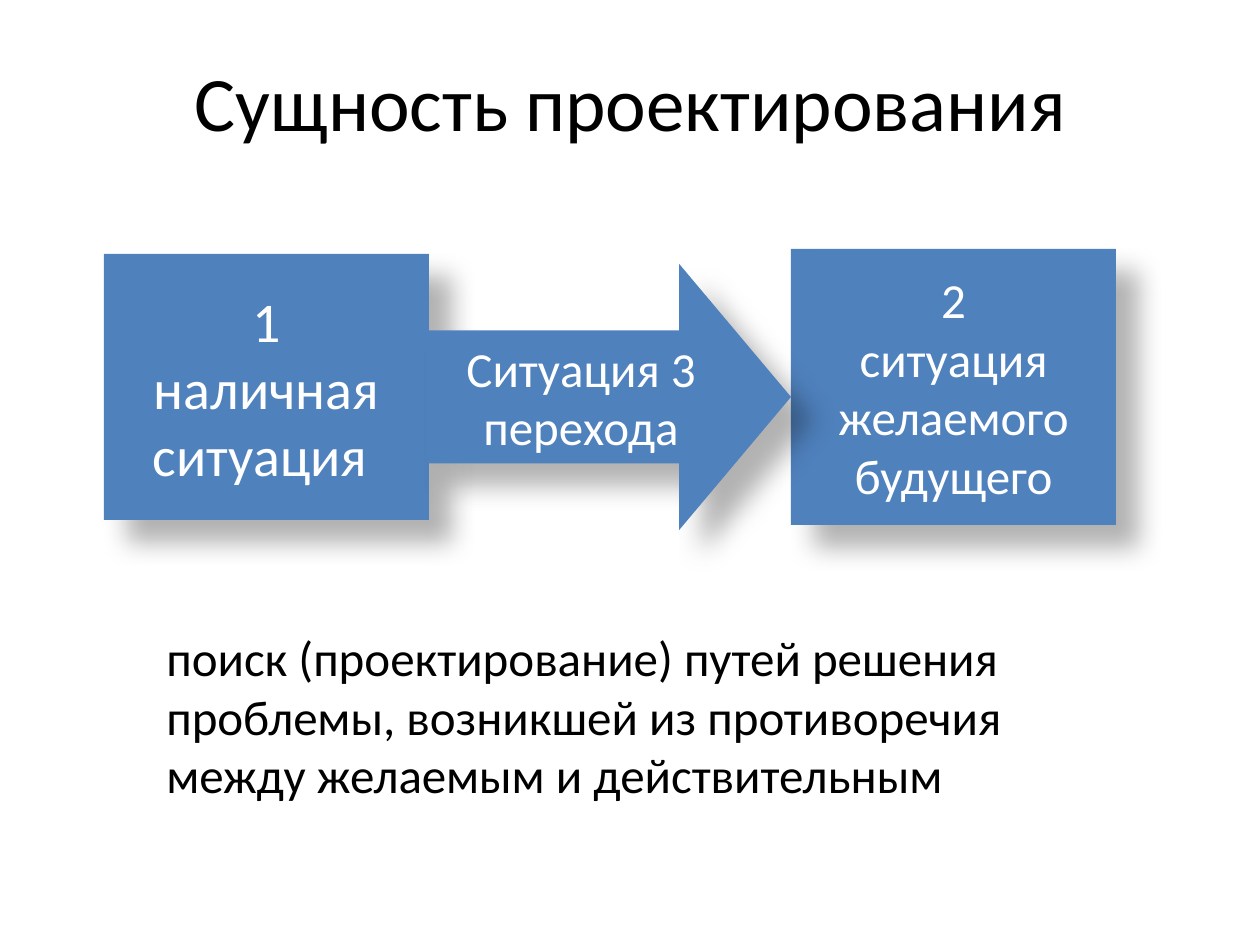
from dataclasses import dataclass

from lxml.etree import SubElement
from pptx import Presentation
from pptx.dml.color import RGBColor
from pptx.enum.shapes import MSO_SHAPE
from pptx.enum.text import MSO_ANCHOR, MSO_AUTO_SIZE, PP_ALIGN
from pptx.oxml.ns import qn
from pptx.util import Emu, Pt

EMU_PER_PX = 914400 / 126


def px(length):
    return Emu(round(length * EMU_PER_PX))


@dataclass(frozen=True)
class Theme:
    font: str = "Calibri"
    ink: str = "000000"
    light: str = "FFFFFF"
    accent: str = "4F81BD"
    title_size: int = 44
    large_size: int = 32
    body_size: int = 28
    shadow_blur: int = 15
    shadow_distance: int = 18
    shadow_angle: int = 45
    shadow_opacity: int = 30


class SlideBuilder:
    def __init__(self, slide, theme):
        self.slide = slide
        self.theme = theme

    def place(self, element, box):
        element.left, element.top, element.width, element.height = map(px, box)

    def set_text(self, frame, text, size, color, align, anchor):
        frame.text = text
        frame.word_wrap = True
        frame.vertical_anchor = anchor
        for paragraph in frame.paragraphs:
            paragraph.alignment = align
            for run in paragraph.runs:
                run.font.name = self.theme.font
                run.font.size = Pt(size)
                run.font.color.rgb = RGBColor.from_string(color)

    def title(self, text, box):
        heading = self.slide.shapes.title
        self.place(heading, box)
        self.set_text(heading.text_frame, text, self.theme.title_size,
                      self.theme.ink, PP_ALIGN.CENTER, MSO_ANCHOR.MIDDLE)

    def cast_shadow(self, shape):
        """Replace the inherited shadow with the theme's soft one."""
        theme = self.theme
        shape.shadow.inherit = False
        effects = shape._element.spPr.find(qn("a:effectLst"))
        shadow = SubElement(
            effects, qn("a:outerShdw"),
            blurRad=str(Pt(theme.shadow_blur)),
            dist=str(Pt(theme.shadow_distance)),
            dir=str(theme.shadow_angle * 60000),
            algn="tl", rotWithShape="0")
        color = SubElement(shadow, qn("a:srgbClr"), val=theme.ink)
        SubElement(color, qn("a:alpha"), val=str(theme.shadow_opacity * 1000))

    def block(self, kind, text, box, size, adjustments=()):
        block = self.slide.shapes.add_shape(kind, *map(px, box))
        for index, value in enumerate(adjustments):
            block.adjustments[index] = value
        block.fill.solid()
        block.fill.fore_color.rgb = RGBColor.from_string(self.theme.accent)
        block.line.fill.background()
        self.cast_shadow(block)
        self.set_text(block.text_frame, text, size, self.theme.light,
                      PP_ALIGN.CENTER, MSO_ANCHOR.MIDDLE)

    def caption(self, text, box):
        caption = self.slide.shapes.add_textbox(*map(px, box))
        self.set_text(caption.text_frame, text, self.theme.body_size,
                      self.theme.ink, PP_ALIGN.LEFT, MSO_ANCHOR.TOP)
        caption.text_frame.auto_size = MSO_AUTO_SIZE.SHAPE_TO_FIT_TEXT


def main():
    presentation = Presentation()
    presentation.slide_width, presentation.slide_height = px(1260), px(945)
    theme = Theme()
    slide = presentation.slides.add_slide(presentation.slide_layouts[5])
    builder = SlideBuilder(slide, theme)

    builder.title("Сущность проектирования", (64, 26, 1134, 149))
    builder.block(MSO_SHAPE.RECTANGLE, "1\nналичная ситуация ",
                  (104, 254, 325, 266), theme.large_size)
    builder.block(MSO_SHAPE.RECTANGLE, "2\nситуация желаемого будущего",
                  (791, 249, 325, 276), theme.body_size)
    builder.block(MSO_SHAPE.RIGHT_ARROW, "Ситуация 3 перехода",
                  (427, 264, 364, 266), theme.body_size, (0.5, 0.42))
    builder.caption("поиск (проектирование) путей решения проблемы, возникшей "
                    "из противоречия между желаемым и действительным",
                    (154, 621, 983, 192))
    presentation.save("out.pptx")


if __name__ == "__main__":
    main()
